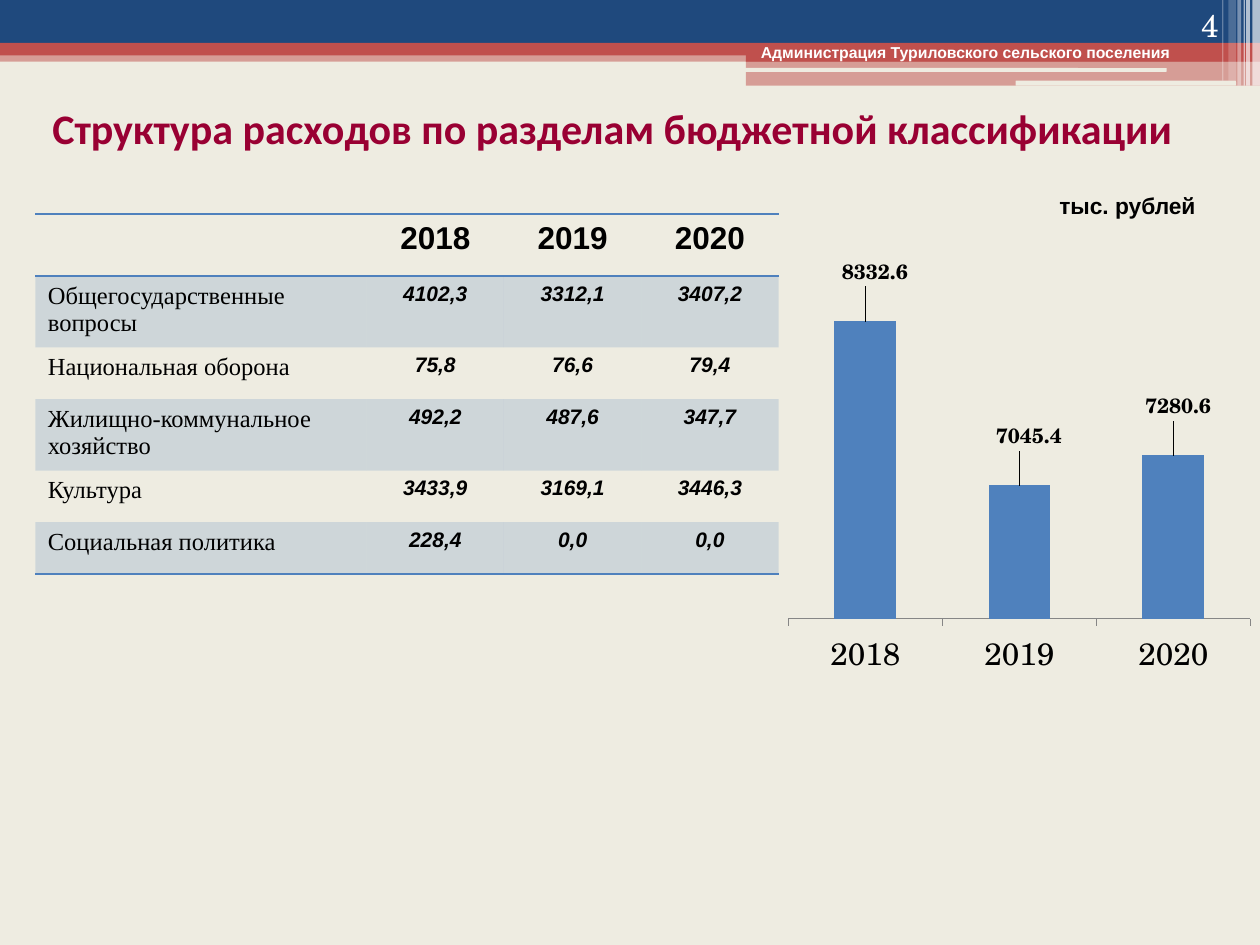
from dataclasses import dataclass

from lxml import etree
from pptx import Presentation
from pptx.chart.data import CategoryChartData
from pptx.dml.color import RGBColor
from pptx.enum import chart as charts, shapes, text
from pptx.oxml import ns
from pptx.util import Inches, Pt


@dataclass(frozen=True)
class Theme:
    paper: str = "EEECE1"
    navy: str = "1F497D"
    red: str = "C0504D"
    blue: str = "4F81BD"
    wine: str = "990033"
    white: str = "FFFFFF"
    black: str = "000000"
    axis: str = "868686"
    sans: str = "Arial"
    serif: str = "Times New Roman"
    heading: str = "Calibri"
    book: str = "TeX Gyre Schola"
    title_size: int = 24
    large: int = 18
    row_size: int = 14
    unit_size: int = 13
    value_size: int = 12
    owner_size: int = 9


theme = Theme()


def paint(fill, properties, color, opacity=100):
    fill.solid()
    fill.fore_color.rgb = RGBColor.from_string(color)
    if opacity < 100:
        rgb = properties.find(ns.qn("a:solidFill")).find(ns.qn("a:srgbClr"))
        etree.SubElement(rgb, ns.qn("a:alpha"), val=str(opacity * 1000))


def style(font, face, size, color, bold=False, italic=False):
    font.name = face
    font.size = Pt(size)
    font.color.rgb = RGBColor.from_string(color)
    font.bold = bold
    font.italic = italic


prs = Presentation()
prs.slide_width, prs.slide_height = Inches(10), Inches(7.5)
slide = prs.slides.add_slide(prs.slide_layouts[5])
slide.background.fill.solid()
slide.background.fill.fore_color.rgb = RGBColor.from_string(theme.paper)

RECT, ROUND = shapes.MSO_SHAPE.RECTANGLE, shapes.MSO_SHAPE.ROUNDED_RECTANGLE
header_bands = [
    (RECT, 0, 0.4, 10, 0.09, theme.red, 50),
    (RECT, 0, 0, 10, 0.34, theme.navy, 100),
    (RECT, 0, 0.34, 10, 0.1, theme.red, 100),
    (RECT, 5.92, 0.39, 4.08, 0.1, theme.red, 100),
    (RECT, 5.92, 0.48, 4.08, 0.2, theme.red, 50),
    (ROUND, 5.91, 0.54, 3.35, 0.03, theme.paper, 100),
    (ROUND, 8.06, 0.64, 1.75, 0.04, theme.paper, 100),
    (RECT, 9.94, 0, 0.06, 0.68, theme.white, 65),
    (RECT, 9.89, 0, 0.03, 0.68, theme.white, 65),
    (RECT, 9.87, 0, 0.01, 0.68, theme.white, 60),
    (RECT, 9.82, 0, 0.03, 0.68, theme.white, 40),
    (RECT, 9.75, 0, 0.06, 0.64, theme.white, 20),
    (RECT, 9.7, 0, 0.01, 0.64, theme.white, 30),
]
for kind, left, top, width, height, color, opacity in header_bands:
    band = slide.shapes.add_shape(kind, Inches(left), Inches(top), Inches(width), Inches(height))
    band.shadow.inherit = False
    band.line.fill.background()
    paint(band.fill, band.element.spPr, color, opacity)

title = slide.shapes.title
title.left, title.top, title.width, title.height = Inches(0), Inches(0.76), Inches(9.72), Inches(0.5)
title.text_frame.text = "Структура расходов по разделам бюджетной классификации"
title.text_frame.auto_size = text.MSO_AUTO_SIZE.NONE
title.text_frame.paragraphs[0].alignment = text.PP_ALIGN.CENTER
style(title.text_frame.paragraphs[0].font, theme.heading, theme.title_size, theme.wine, bold=True)

captions = [
    ("Администрация Туриловского сельского поселения", 5.94, 0.29, 3.62, 0.25,
     theme.sans, theme.owner_size, theme.white, True, "LEFT", "TOP"),
    ("4", 8.94, 0, 0.83, 0.4, theme.book, theme.large, theme.white, False, "RIGHT", "BOTTOM"),
    ("тыс. рублей", 8.31, 1.47, 1.5, 0.32, theme.sans, theme.unit_size, theme.black, True, "LEFT", "TOP"),
]
for words, left, top, width, height, face, size, color, bold, align, anchor in captions:
    caption = slide.shapes.add_textbox(Inches(left), Inches(top), Inches(width), Inches(height)).text_frame
    caption.word_wrap = True
    caption.vertical_anchor = text.MSO_ANCHOR[anchor]
    caption.text = words
    caption.paragraphs[0].alignment = text.PP_ALIGN[align]
    style(caption.paragraphs[0].font, face, size, color, bold)

years = ["2018", "2019", "2020"]
expenses = [
    ["", *years],
    ["Общегосударственные вопросы", "4102,3", "3312,1", "3407,2"],
    ["Национальная оборона", "75,8", "76,6", "79,4"],
    ["Жилищно-коммунальное хозяйство", "492,2", "487,6", "347,7"],
    ["Культура", "3433,9", "3169,1", "3446,3"],
    ["Социальная политика", "228,4", "0,0", "0,0"],
]
row_heights = [0.49, 0.53, 0.41, 0.53, 0.41, 0.41]
table = slide.shapes.add_table(
    len(expenses), 4, Inches(0.28), Inches(1.7), Inches(5.9), Inches(sum(row_heights))).table
table.first_row = table.horz_banding = False
table._tbl.tblPr.find(ns.qn("a:tableStyleId")).text = "{2D5ABB26-0587-4C30-8999-92F81FD0307C}"
for column, width in zip(table.columns, [2.63, 1.09, 1.09, 1.09]):
    column.width = Inches(width)

for r, row in enumerate(expenses):
    table.rows[r].height = Inches(row_heights[r])
    edges = {0: ["a:lnT", "a:lnB"], len(expenses) - 1: ["a:lnB"]}.get(r, [])
    for c, words in enumerate(row):
        cell = table.cell(r, c)
        cell.text = words
        entry = cell.text_frame.paragraphs[0]
        if c:
            entry.alignment = text.PP_ALIGN.CENTER
        if r == 0:
            style(entry.font, theme.sans, theme.large, theme.black, bold=True)
        elif c == 0:
            style(entry.font, theme.serif, theme.row_size, theme.black)
        else:
            style(entry.font, theme.sans, theme.value_size, theme.black, bold=True, italic=True)
        properties = cell._tc.get_or_add_tcPr()
        for edge in edges:
            line = etree.SubElement(properties, ns.qn(edge), w=str(Pt(1)))
            stroke = etree.SubElement(line, ns.qn("a:solidFill"))
            etree.SubElement(stroke, ns.qn("a:srgbClr"), val=theme.blue)
        if r % 2:
            paint(cell.fill, properties, theme.blue, 20)
        else:
            cell.fill.background()

totals = CategoryChartData(number_format="0.0")
totals.categories = years
totals.add_series("Series 1", [8332.6, 7045.4, 7280.6])
chart = slide.shapes.add_chart(
    charts.XL_CHART_TYPE.COLUMN_CLUSTERED,
    Inches(6.18), Inches(2.02), Inches(3.82), Inches(3.39), totals).chart
chart.has_legend = chart.has_title = False
style(chart.font, theme.book, theme.large, theme.black)
chart.value_axis.visible = False
chart.value_axis.has_major_gridlines = False
chart.value_axis.minimum_scale = 6000
chart.value_axis.maximum_scale = 8500
chart.category_axis.major_tick_mark = charts.XL_TICK_MARK.OUTSIDE
chart.category_axis.format.line.color.rgb = RGBColor.from_string(theme.axis)

plot = chart.plots[0]
plot.gap_width = 150
plot.vary_by_categories = False
bars = plot.series[0]
paint(bars.format.fill, bars.format._element.spPr, theme.blue)
bars.data_labels.show_value = True
style(bars.data_labels.font, theme.book, theme.value_size, theme.black, bold=True)

plot_area = plot._element.getparent()
for old in plot_area.findall(ns.qn("c:layout")):
    plot_area.remove(old)
layouts = [(plot_area, {"layoutTarget": "inner", "xMode": "edge", "yMode": "edge",
                        "x": 0.02, "y": 0.09, "w": 0.96, "h": 0.76}, 0)]
for i, shift in enumerate([0.02, 0.02, 0.01]):
    label = bars.points[i].data_label
    style(label.font, theme.book, theme.value_size, theme.black, bold=True)
    label.position = charts.XL_LABEL_POSITION.OUTSIDE_END
    layouts.append((bars._element.findall(".//" + ns.qn("c:dLbl"))[i], {"x": shift, "y": -0.07}, 1))
for owner, settings, place in layouts:
    layout = etree.Element(ns.qn("c:layout"))
    manual = etree.SubElement(layout, ns.qn("c:manualLayout"))
    for key, value in settings.items():
        etree.SubElement(manual, ns.qn("c:" + key), val=str(value))
    owner.insert(place, layout)

prs.save("out.pptx")
